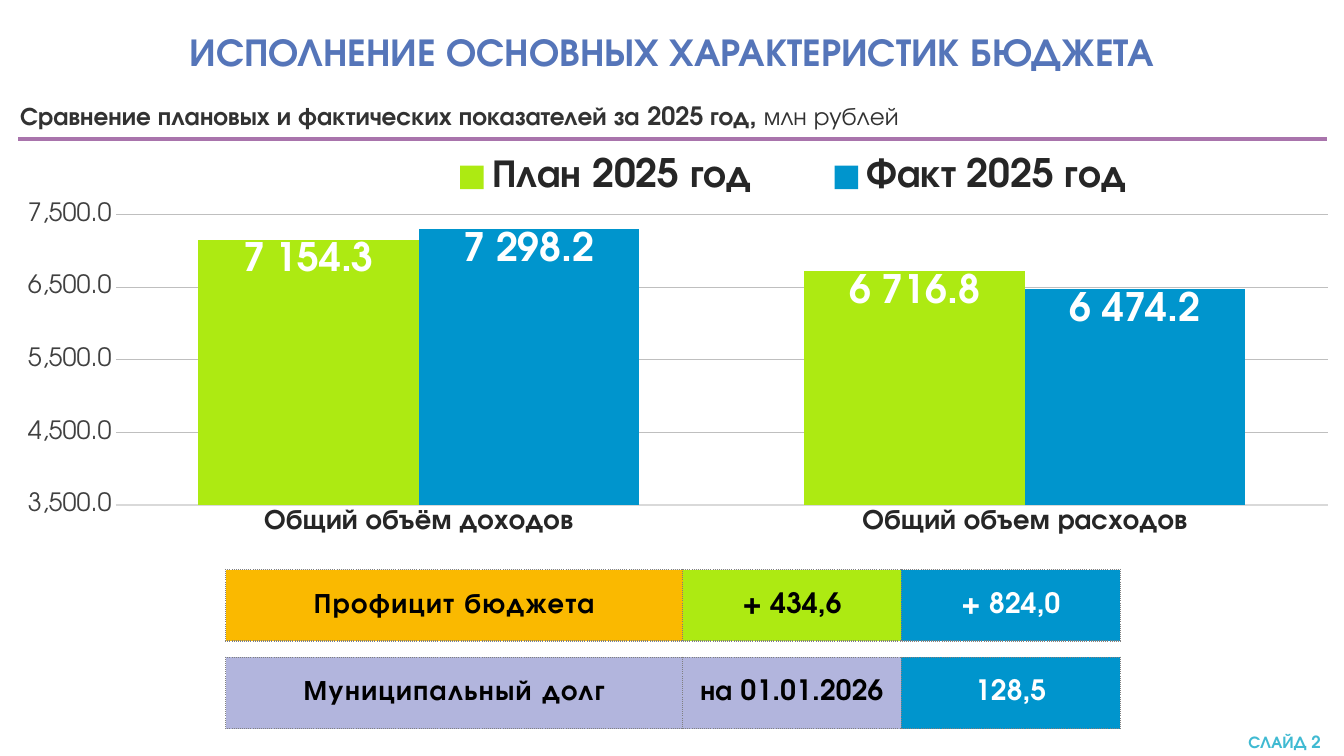
from dataclasses import dataclass
from lxml import etree
from pptx import Presentation
from pptx.chart.data import CategoryChartData
from pptx.dml.color import RGBColor
from pptx.enum.chart import XL_CHART_TYPE, XL_LABEL_POSITION, XL_LEGEND_POSITION, XL_TICK_MARK
from pptx.enum.shapes import MSO_CONNECTOR
from pptx.enum.text import MSO_ANCHOR, PP_ALIGN
from pptx.oxml import parse_xml
from pptx.oxml.ns import nsdecls, qn
from pptx.util import Pt

COLUMN = XL_CHART_TYPE.COLUMN_CLUSTERED
IN_END = XL_LABEL_POSITION.INSIDE_END
TOP = XL_LEGEND_POSITION.TOP
NO_TICK = XL_TICK_MARK.NONE
LINE = MSO_CONNECTOR.STRAIGHT
MIDDLE = MSO_ANCHOR.MIDDLE
LEFT, CENTER = PP_ALIGN.LEFT, PP_ALIGN.CENTER

SCALE = 9144  # 100 px to the inch


@dataclass(frozen=True)
class Theme:
    face: str = "TeX Gyre Adventor"
    title: str = "5575B9"
    rule: str = "A974AC"
    note: str = "40BAD2"
    text: str = "323232"
    dark: str = "262626"
    tick: str = "404040"
    grid: str = "BFBFBF"
    axis: str = "D9D9D9"
    edge: str = "808080"
    black: str = "000000"
    white: str = "FFFFFF"
    plan: str = "ADEA12"
    fact: str = "0095CD"
    gold: str = "FAB900"
    lilac: str = "B2B5DD"
    big: int = 28
    mid: int = 20
    body: int = 18
    small: int = 12


T = Theme()


def px(n):
    return int(n * SCALE)


def rgb(code):
    return RGBColor.from_string(code)


def put(obj, **vals):
    for name, val in vals.items():
        setattr(obj, name, val)


def style(font, size, color, bold=True):
    put(font, name=T.face, size=Pt(size), bold=bold)
    font.color.rgb = rgb(color)


def write(frame, runs, size, color, align=CENTER, pad=10, space=None):
    """Fill a text frame with one paragraph of (text, bold) runs."""
    put(frame, word_wrap=True, vertical_anchor=MIDDLE,
        margin_left=px(pad), margin_right=px(pad),
        margin_top=px(pad), margin_bottom=px(pad))
    para = frame.paragraphs[0]
    put(para, alignment=align, line_spacing=space)
    for text, bold in runs:
        run = para.add_run()
        run.text = text
        style(run.font, size, color, bold)


def place(shape, box):
    put(shape, **dict(zip(("left", "top", "width", "height"), map(px, box))))


def add_text(slide, box, runs, size, color, **more):
    shape = slide.shapes.add_textbox(*map(px, box))
    write(shape.text_frame, runs, size, color, **more)


def add_rule(slide, x1, x2, y):
    line = slide.shapes.add_connector(LINE, px(x1), px(y), px(x2), px(y))
    line.line.color.rgb = rgb(T.rule)
    line.line.width = Pt(3)
    etree.SubElement(line._element.spPr, qn("a:effectLst"))


def layout(x, y, w, h, inner=False):
    """Chart layout given as parts of the chart area."""
    vals = [("xMode", "edge"), ("yMode", "edge"), ("x", x), ("y", y), ("w", w), ("h", h)]
    if inner:
        vals.insert(0, ("layoutTarget", "inner"))
    body = "".join(f'<c:{tag} val="{val}"/>' for tag, val in vals)
    return parse_xml(f'<c:layout {nsdecls("c")}><c:manualLayout>{body}</c:manualLayout></c:layout>')


def add_chart(slide, box, cats, rows):
    data = CategoryChartData(number_format="#,##0.0")
    data.categories = cats
    for name, vals, _ in rows:
        data.add_series(name, vals)
    chart = slide.shapes.add_chart(COLUMN, *map(px, box), data).chart
    put(chart, has_title=False, has_legend=True)
    style(chart.font, T.body, T.black, False)

    # Legend and plot area
    put(chart.legend, position=TOP, include_in_layout=False)
    style(chart.legend.font, T.big, T.dark)
    legend = chart.legend._element
    for old in legend.findall(qn("c:layout")):
        legend.remove(old)
    legend.find(qn("c:legendPos")).addnext(layout(0.29, 0.03, 0.6, 0.14))
    area = chart._chartSpace.chart.plotArea
    for old in area.findall(qn("c:layout")):
        area.remove(old)
    area.insert(0, layout(0.086, 0.188, 0.902, 0.688, True))

    # Axes
    cat, val = chart.category_axis, chart.value_axis
    for axis in (cat, val):
        put(axis, major_tick_mark=NO_TICK, minor_tick_mark=NO_TICK)
    style(cat.tick_labels.font, T.mid, T.dark)
    style(val.tick_labels.font, T.body, T.tick, False)
    put(val, minimum_scale=3500, maximum_scale=7500, major_unit=1000)
    put(val.tick_labels, number_format="#,##0.0", number_format_is_linked=False)
    val.format.line.fill.background()
    for line, color in ((cat.format.line, T.axis), (val.major_gridlines.format.line, T.grid)):
        line.color.rgb = rgb(color)
        line.width = Pt(0.75)

    # Columns and their labels
    plot = chart.plots[0]
    put(plot, gap_width=75, overlap=0, vary_by_categories=False)
    for series, (_, _, color) in zip(plot.series, rows):
        series.format.fill.solid()
        series.format.fill.fore_color.rgb = rgb(color)
        labels = series.data_labels
        put(labels, show_value=True, position=IN_END,
            number_format=r"#\ ##0.0", number_format_is_linked=False)
        style(labels.font, T.big, T.white)


def add_edges(cell):
    props = cell._tc.get_or_add_tcPr()
    for i, side in enumerate(("lnL", "lnR", "lnT", "lnB")):
        props.insert(i, parse_xml(
            f'<a:{side} {nsdecls("a")} w="12700"><a:solidFill><a:srgbClr val="{T.edge}"/>'
            f'</a:solidFill><a:prstDash val="sysDot"/></a:{side}>'))


def add_strip(slide, top, cells):
    """One-row table of (text, fill, font colour, letter spacing) cells."""
    widths = (453, 217, 217)
    box = (224, top, sum(widths), 71)
    table = slide.shapes.add_table(1, len(widths), *map(px, box)).table
    put(table, first_row=False, horz_banding=False)
    for i, (text, fill, color, gap) in enumerate(cells):
        table.columns[i].width = px(widths[i])
        cell = table.cell(0, i)
        put(cell, vertical_anchor=MIDDLE, margin_left=px(4), margin_right=px(4),
            margin_top=px(4), margin_bottom=px(4))
        cell.fill.solid()
        cell.fill.fore_color.rgb = rgb(fill)
        para = cell.text_frame.paragraphs[0]
        para.alignment = CENTER
        run = para.add_run()
        run.text = text
        style(run.font, T.mid, color)
        run.font._element.set("spc", str(gap))
        add_edges(cell)


def main():
    deck = Presentation()
    put(deck, slide_width=px(1333), slide_height=px(750))
    slide = deck.slides.add_slide(deck.slide_layouts[5])

    # Chart
    add_chart(slide, (0, 134, 1333, 419),
              ("Общий объём доходов", "Общий объем расходов"),
              (("План 2025 год", (7154.3, 6716.8), T.plan),
               ("Факт 2025 год", (7298.2, 6474.2), T.fact)))

    # Headings
    title = slide.shapes.title
    place(title, (0, 18, 1333, 70))
    write(title.text_frame, [("ИСПОЛНЕНИЕ ОСНОВНЫХ ХАРАКТЕРИСТИК БЮДЖЕТА", True)],
          T.big, T.title, pad=13, space=0.9)
    add_rule(slide, 18, 1316, 138)
    add_text(slide, (1215, 722, 118, 28), [("СЛАЙД 2", True)], T.small, T.note, pad=5)
    add_text(slide, (7, 96, 1326, 40),
             [("Сравнение плановых и фактических показателей за 2025 год, ", True),
              ("млн рублей", False)],
             T.body, T.text, align=LEFT, pad=13, space=0.9)

    # Totals
    add_strip(slide, 565, (("Профицит бюджета", T.gold, T.black, 100),
                           ("+ 434,6", T.plan, T.black, 10),
                           ("+ 824,0", T.fact, T.white, 10)))
    add_strip(slide, 652, (("Муниципальный долг", T.lilac, T.black, 100),
                           ("на 01.01.2026", T.lilac, T.black, 10),
                           ("128,5", T.fact, T.white, 10)))
    deck.save("out.pptx")


if __name__ == "__main__":
    main()
